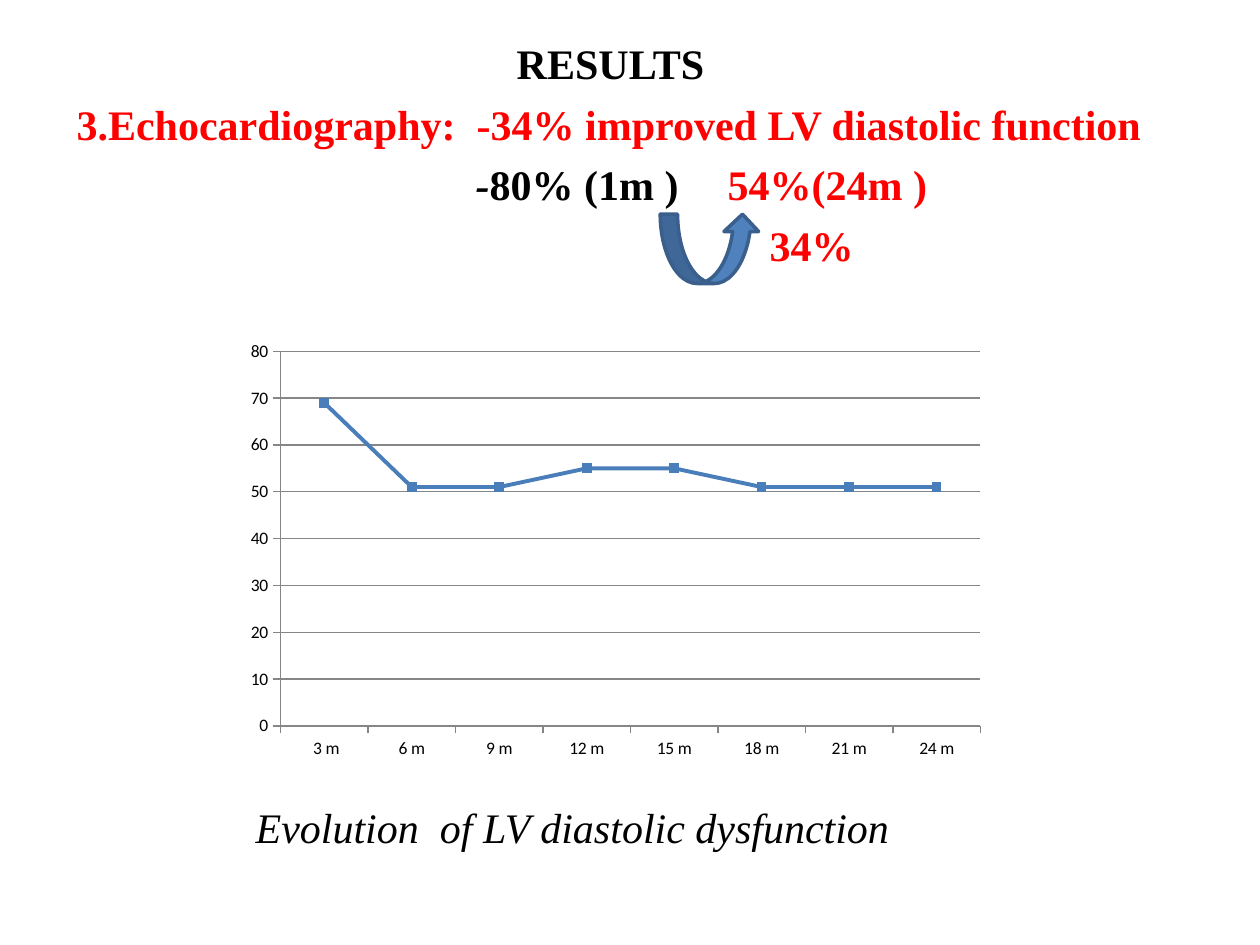
from pptx import Presentation
from pptx.chart.data import CategoryChartData
from pptx.dml.color import RGBColor
from pptx.enum.chart import XL_CHART_TYPE as CT, XL_MARKER_STYLE as MS, XL_TICK_MARK as TM
from pptx.enum.shapes import MSO_SHAPE as SHAPE
from pptx.oxml import parse_xml
from pptx.oxml.ns import nsdecls
from pptx.util import Pt

BLACK = RGBColor(0x00, 0x00, 0x00)
RED = RGBColor(0xFF, 0x00, 0x00)
BLUE = RGBColor(0x4F, 0x81, 0xBD)
SERIES_BLUE = RGBColor(0x4A, 0x7E, 0xBB)
DARK_BLUE = RGBColor(0x3A, 0x5F, 0x8C)
GREY = RGBColor(0x86, 0x86, 0x86)


def add_run(p, text, font="Times New Roman", size=24, color=BLACK, bold=True, italic=False):
    r = p.add_run()
    r.text = text
    f = r.font
    f.name, f.size, f.bold, f.italic = font, Pt(size), bold, italic
    f.color.rgb = color


def indent(p, left, tab=None):
    """Set the left indent and an optional tab stop, in points."""
    pPr = p._p.get_or_add_pPr()
    pPr.set("marL", str(Pt(left)))
    pPr.set("indent", "0")
    if tab:
        pPr.append(parse_xml(
            f'<a:tabLst {nsdecls("a")}><a:tab pos="{Pt(tab)}" algn="l"/></a:tabLst>'))


class SlideBuilder:
    line_gap = 5.8
    chart_font = "Calibri"
    chart_size = 10

    def __init__(self, prs):
        self.s = prs.slides.add_slide(prs.slide_layouts[6])

    def text(self, box, lines):
        """Each line is (left indent, tab stop, [(text, format), ...])."""
        tf = self.s.shapes.add_textbox(*map(Pt, box)).text_frame
        tf.word_wrap = True
        for i, (left, tab, runs) in enumerate(lines):
            p = tf.add_paragraph() if i else tf.paragraphs[0]
            indent(p, left, tab)
            p.space_before = Pt(self.line_gap if i else 0)
            for text, fmt in runs:
                add_run(p, text, **fmt)

    def shape(self, kind, box, fill, line, width):
        sp = self.s.shapes.add_shape(kind, *map(Pt, box))
        sp.shadow.inherit = False
        sp.fill.solid()
        sp.fill.fore_color.rgb = fill
        sp.line.color.rgb = line
        sp.line.width = Pt(width)

    def line_chart(self, box, categories, name, values, plot):
        data = CategoryChartData()
        data.categories = categories
        data.add_series(name, values)
        chart = self.s.shapes.add_chart(CT.LINE_MARKERS, *map(Pt, box), data).chart
        chart.has_legend = chart.has_title = False
        chart.font.name, chart.font.size = self.chart_font, Pt(self.chart_size)
        chart.font.color.rgb = BLACK
        chart.plots[0].vary_by_categories = False

        val, cat = chart.value_axis, chart.category_axis
        val.minimum_scale, val.maximum_scale, val.major_unit = 0, 80, 10
        val.has_major_gridlines = True
        for axis in (val, cat):
            axis.major_tick_mark, axis.minor_tick_mark = TM.OUTSIDE, TM.NONE
        for part in (val, cat, val.major_gridlines):
            part.format.line.color.rgb = GREY
            part.format.line.width = Pt(0.75)

        series = chart.plots[0].series[0]
        series.smooth = False
        series.format.line.color.rgb = SERIES_BLUE
        series.format.line.width = Pt(2.25)
        marker = series.marker
        marker.style, marker.size = MS.SQUARE, 5
        marker.format.fill.solid()
        marker.format.fill.fore_color.rgb = BLUE
        marker.format.line.color.rgb = SERIES_BLUE
        self.place_plot(chart, plot)

    def place_plot(self, chart, plot):
        """Fix the inner plot area, as fractions of the chart."""
        area = chart._chartSpace.chart.plotArea
        for old in area.findall("{*}layout"):
            area.remove(old)
        sizes = "".join(f'<c:{k} val="{v}"/>' for k, v in zip("xywh", plot))
        area.insert(0, parse_xml(
            f'<c:layout {nsdecls("c")}><c:manualLayout><c:layoutTarget val="inner"/>'
            f'<c:xMode val="edge"/><c:yMode val="edge"/>{sizes}</c:manualLayout></c:layout>'))


def main():
    prs = Presentation()
    prs.slide_width, prs.slide_height = Pt(720), Pt(540)
    slide = SlideBuilder(prs)
    red = dict(color=RED)
    slide.text((36.7, 18, 647, 145), [
        (251.5, None, [("RESULTS", {})]),
        (0, None, [("3.Echocardiography:  -34% improved LV diastolic function", red)]),
        (228, 380, [("-", dict(italic=True)), ("80% (1m )\t", {}), ("54%(24m )", red)]),
        (396, None, [("34%", red)]),
    ])
    slide.line_chart((139, 190.8, 425.5, 249), [" 3 m"] + [f"{m} m" for m in range(6, 25, 3)],
                     "Series 1", (69, 51, 51, 55, 55, 51, 51, 51), (0.05, 0.04, 0.94, 0.86))
    slide.shape(SHAPE.CURVED_UP_ARROW, (377.3, 122.4, 56.9, 39.6), BLUE, DARK_BLUE, 2)
    slide.text((139, 454.4, 420, 36), [
        (0, None, [("Evolution  of LV diastolic dysfunction", dict(bold=False, italic=True))]),
    ])
    prs.save("out.pptx")


if __name__ == "__main__":
    main()
